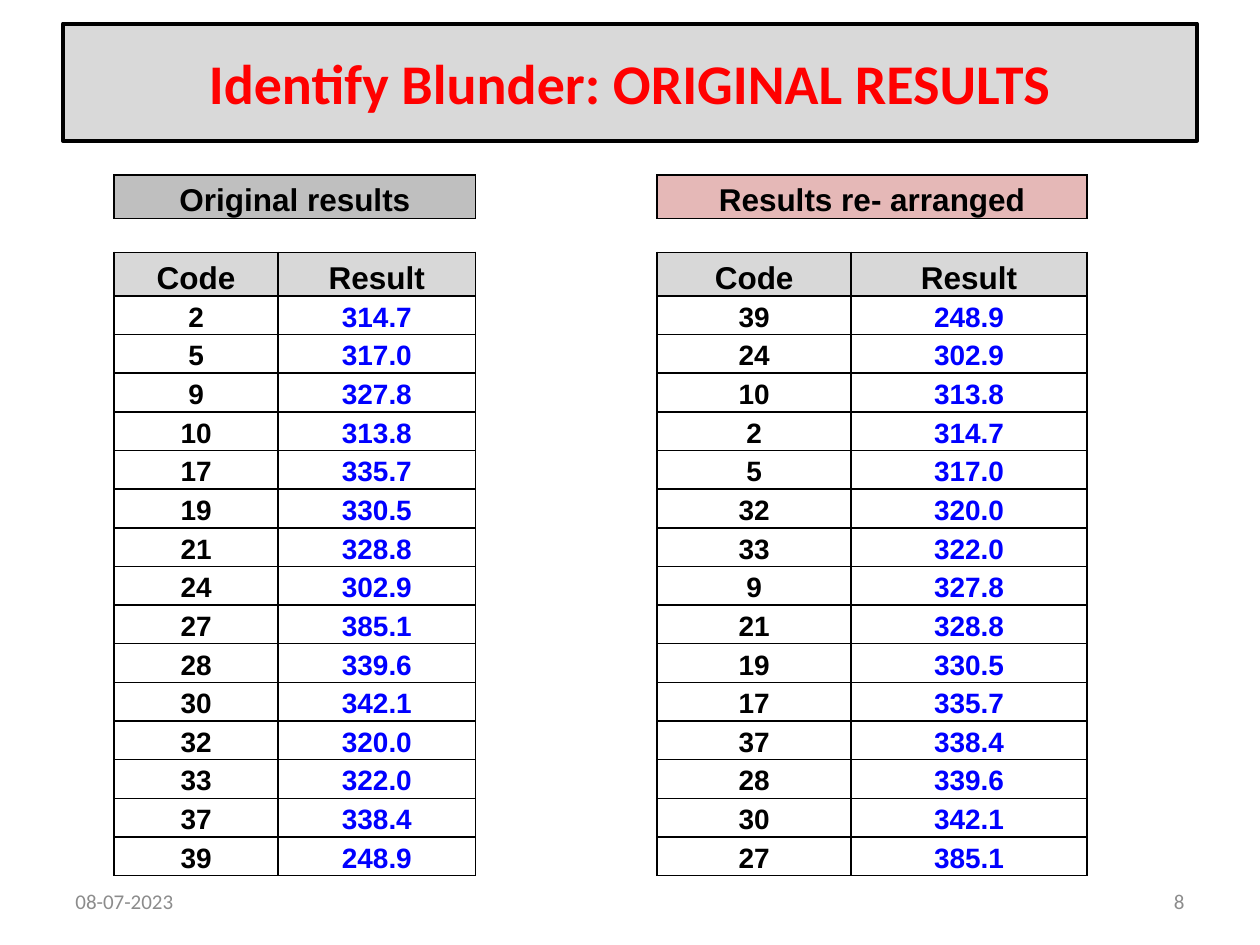
from typing import NamedTuple

from lxml import etree
from pptx import Presentation
from pptx.dml.color import RGBColor
from pptx.enum import shapes, text
from pptx.oxml import ns
from pptx.util import Pt

PLAIN = "{2D5ABB26-0587-4C30-8999-92F81FD0307C}"  # table style with no fill or grid
COLS = [93.6, 113, 103.7, 110.9, 134.6]
HEAD, SPACE, BODY = 23.8, 19.4, 21.22
GAP = 2  # empty column between the two lists
BLACK, BLUE, GREY, WHITE = "000000", "0000FF", "8C8C8C", "FFFFFF"
LEFT, MID, RIGHT = text.PP_ALIGN.LEFT, text.PP_ALIGN.CENTER, text.PP_ALIGN.RIGHT
MIDDLE, BOTTOM = text.MSO_ANCHOR.MIDDLE, text.MSO_ANCHOR.BOTTOM


class Lab(NamedTuple):
    code: str
    value: str


class Box(NamedTuple):
    left: float
    top: float
    width: float
    height: float


class Style(NamedTuple):
    size: float
    color: str = BLACK
    face: str = "Arial"
    bold: bool = True
    align: text.PP_ALIGN = MID
    space: float = 1.0


LABS = [
    Lab("2", "314.7"), Lab("5", "317.0"), Lab("9", "327.8"),
    Lab("10", "313.8"), Lab("17", "335.7"), Lab("19", "330.5"),
    Lab("21", "328.8"), Lab("24", "302.9"), Lab("27", "385.1"),
    Lab("28", "339.6"), Lab("30", "342.1"), Lab("32", "320.0"),
    Lab("33", "322.0"), Lab("37", "338.4"), Lab("39", "248.9"),
]


def paint(form, color: str) -> None:
    """Give a fill or line format one solid colour."""
    form.solid()
    form.fore_color.rgb = RGBColor.from_string(color)


def write(frame, words: str, style: Style) -> None:
    para = frame.paragraphs[0]
    para.alignment = style.align
    para.line_spacing = style.space
    run = para.add_run()
    run.text = words
    looks = {"size": Pt(style.size), "name": style.face, "bold": style.bold}
    for name, value in looks.items():
        setattr(run.font, name, value)
    paint(run.font.fill, style.color)


def add_title(slide, box: Box, words: str) -> None:
    shape = slide.shapes.add_shape(shapes.MSO_SHAPE.RECTANGLE, *map(Pt, box))
    shape.shadow.inherit = False
    paint(shape.fill, "D9D9D9")
    paint(shape.line.fill, BLACK)
    shape.line.width = Pt(2.25)
    shape.text_frame.vertical_anchor = MIDDLE
    shape.text_frame.word_wrap = True
    write(shape.text_frame, words, Style(32, "FF0000", "Calibri"))


def add_note(slide, box: Box, words: str, align: text.PP_ALIGN) -> None:
    frame = slide.shapes.add_textbox(*map(Pt, box)).text_frame
    frame.word_wrap = True
    frame.vertical_anchor = MIDDLE
    write(frame, words, Style(12, GREY, "Calibri", False, align))


def rule(cell, sides: str) -> None:
    """Draw thin black borders on the sides named by L, R, T and B."""
    props = cell._tc.get_or_add_tcPr()
    for side in sides:
        line = etree.SubElement(props, ns.qn(f"a:ln{side}"), w=str(Pt(1)))
        fill = etree.SubElement(line, ns.qn("a:solidFill"))
        etree.SubElement(fill, ns.qn("a:srgbClr"), val=BLACK)


def fill_cell(cell, words: str, back: str, style: Style, anchor) -> None:
    paint(cell.fill, back)
    cell.vertical_anchor = anchor
    write(cell.text_frame, words, style)


def shrink(cell) -> None:
    """Keep the text line of an empty cell from stretching its row."""
    para = cell.text_frame.paragraphs[0]._p
    etree.SubElement(para, ns.qn("a:endParaRPr"), sz="800")


def add_list(grid, col: int, name: str, back: str, labs: list[Lab]) -> None:
    """Fill two columns with a heading, column names and results."""
    head = Style(18, space=1.15)
    grid.cell(0, col).merge(grid.cell(0, col + 1))
    fill_cell(grid.cell(0, col), name, back, head, BOTTOM)
    for step, label in enumerate(("Code", "Result")):
        fill_cell(grid.cell(2, col + step), label, "D8D8D8", head, BOTTOM)
    for row, lab in enumerate(labs, 3):
        for step, (words, color) in enumerate(zip(lab, (BLACK, BLUE))):
            style = Style(16, color, space=1.15)
            fill_cell(grid.cell(row, col + step), words, WHITE, style, MIDDLE)


def add_results(slide, left: float, top: float) -> None:
    rows = [HEAD, SPACE, HEAD] + [BODY] * len(LABS)
    box = Box(left, top, sum(COLS), sum(rows))
    frame = slide.shapes.add_table(len(rows), len(COLS), *map(Pt, box))
    grid = frame.table
    grid._tbl.tblPr.find(ns.qn("a:tableStyleId")).text = PLAIN
    grid.first_row = grid.horz_banding = False
    for col, width in zip(grid.columns, COLS):
        col.width = Pt(width)
    pads = {"margin_left": 5, "margin_right": 5, "margin_top": 0, "margin_bottom": 0}
    for r, height in enumerate(rows):
        grid.rows[r].height = Pt(height)
        for c in range(len(COLS)):
            cell = grid.cell(r, c)
            for name, value in pads.items():
                setattr(cell, name, Pt(value))
            rule(cell, ("" if c == GAP else "TB") if r == 1
                 else "LR" if c == GAP else "LRTB")
            if r == 1 or c == GAP:
                shrink(cell)
    add_list(grid, 0, "Original results", "BFBFBF", LABS)
    ranked = sorted(LABS, key=lambda lab: float(lab.value))
    add_list(grid, GAP + 1, "Results re- arranged", "E5B8B7", ranked)


def main() -> None:
    deck = Presentation()
    deck.slide_width, deck.slide_height = Pt(720), Pt(540)
    slide = deck.slides.add_slide(deck.slide_layouts[6])
    add_title(slide, Box(36, 13.5, 648, 67), "Identify Blunder: ORIGINAL RESULTS")
    add_note(slide, Box(516, 500.5, 168, 28.75), "8", RIGHT)
    add_note(slide, Box(36, 500.5, 168, 28.75), "08-07-2023", LEFT)
    add_results(slide, 65.25, 100)
    deck.save("out.pptx")


if __name__ == "__main__":
    main()
